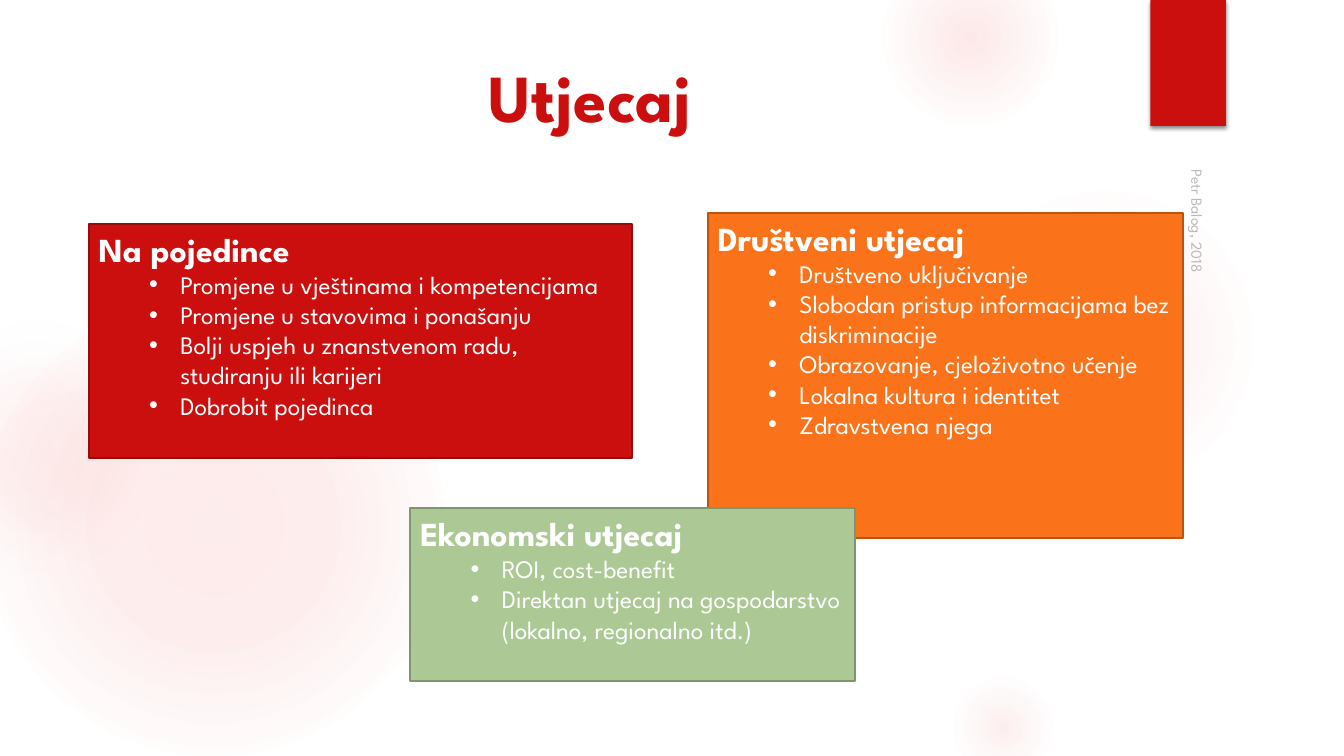
"""Build the slide on the impact on individuals, society and the economy."""
import dataclasses
import typing

import lxml.etree
import pptx
import pptx.dml.color
import pptx.enum.shapes
import pptx.enum.text
import pptx.oxml
import pptx.oxml.ns
import pptx.util

Inches = pptx.util.Inches
Pt = pptx.util.Pt
qn = pptx.oxml.ns.qn
Anchor = pptx.enum.text.MSO_ANCHOR
Align = pptx.enum.text.PP_ALIGN
Preset = pptx.enum.shapes.MSO_SHAPE
Box = tuple[float, float, float, float]


@dataclasses.dataclass(frozen=True)
class Theme:
    """Colours, font and type sizes of the slide."""
    font: str = "League Spartan"
    red: str = "CB0F0F"
    red_edge: str = "960B0B"
    orange: str = "FA731A"
    orange_edge: str = "B95513"
    green: str = "ACC995"
    green_edge: str = "7F956E"
    glow: str = "F35C5C"
    pale: str = "F3F3F3"
    white: str = "FFFFFF"
    grey: str = "8C8C8C"
    black: str = "000000"
    title_size: int = 48
    heading_size: int = 24
    item_size: int = 18
    credit_size: int = 11


THEME = Theme()


class Stop(typing.NamedTuple):
    """One gradient stop: position and opacity in percent, and colour."""
    position: int
    opacity: int
    colour: str = THEME.glow


class Glow(typing.NamedTuple):
    """A soft round glow in the background."""
    left: float
    top: float
    size: float
    stops: tuple[Stop, ...]


class Card(typing.NamedTuple):
    """One kind of impact with its examples."""
    box: Box
    fill: str
    edge: str
    heading: str
    items: tuple[str, ...]


GLOWS = (
    Glow(-0.17, 2.92, 4.58, (Stop(0, 11), Stop(36, 10), Stop(75, 0))),
    Glow(-0.92, 3.17, 2.58, (Stop(0, 8), Stop(36, 5), Stop(71, 0, THEME.pale))),
    Glow(9.41, 1.83, 3.08, (Stop(0, 7), Stop(36, 6), Stop(69, 0))),
    Glow(8.75, -0.5, 1.75, (Stop(0, 14), Stop(36, 7), Stop(73, 0))),
    Glow(9.41, 6.67, 1.08, (Stop(0, 10), Stop(31, 5), Stop(66, 0))),
)

CARDS = (
    Card((0.88, 2.22, 5.39, 2.32), THEME.red, THEME.red_edge, "Na pojedince", (
        "Promjene u vještinama i kompetencijama",
        "Promjene u stavovima i ponašanju",
        "Bolji uspjeh u znanstvenom radu, studiranju ili karijeri",
        "Dobrobit pojedinca")),
    Card((7.02, 2.11, 4.71, 3.23), THEME.orange, THEME.orange_edge, "Društveni utjecaj", (
        "Društveno uključivanje",
        "Slobodan pristup informacijama bez diskriminacije",
        "Obrazovanje, cjeloživotno učenje",
        "Lokalna kultura i identitet",
        "Zdravstvena njega")),
    Card((4.07, 5.04, 4.41, 1.72), THEME.green, THEME.green_edge, "Ekonomski utjecaj", (
        "ROI, cost-benefit",
        "Direktan utjecaj na gospodarstvo (lokalno, regionalno itd.)")),
)


def add_child(parent: typing.Any, tag: str, **attributes: typing.Any) -> typing.Any:
    """Append a drawing element with the given attributes."""
    values = {name: str(value) for name, value in attributes.items()}
    return lxml.etree.SubElement(parent, qn(f"a:{tag}"), values)


def add_colour(parent: typing.Any, colour: str, opacity: int) -> None:
    """Append a colour with its opacity in percent."""
    add_child(add_child(parent, "srgbClr", val=colour), "alpha", val=opacity * 1000)


def write(frame: typing.Any, text: str, *, size: int, colour: str = THEME.white,
          bold: bool = False, align: Align = Align.LEFT, bullet: bool = False,
          opacity: int = 100) -> None:
    """Write one paragraph, filling the first one while it is empty."""
    first = frame.paragraphs[0]
    paragraph = frame.add_paragraph() if first.runs else first
    paragraph.alignment = align
    if bullet:
        paragraph.level = 1
        properties = paragraph._p.get_or_add_pPr()
        properties.set("marL", str(Inches(0.81)))
        properties.set("indent", str(Inches(-0.31)))
        add_child(properties, "buFont", typeface="Arial")
        add_child(properties, "buChar", char="•")
    run = paragraph.add_run()
    run.text = text
    run.font.name = THEME.font
    run.font.size = Pt(size)
    run.font.bold = bold
    run.font.color.rgb = pptx.dml.color.RGBColor.from_string(colour)
    if opacity < 100:
        shade = run.font.fill._xPr.find(f"{qn('a:solidFill')}/{qn('a:srgbClr')}")
        add_child(shade, "alpha", val=opacity * 1000)


def set_frame(frame: typing.Any, anchor: Anchor = Anchor.TOP) -> None:
    """Make a text frame wrap at a fixed size."""
    frame.word_wrap = True
    frame.auto_size = pptx.enum.text.MSO_AUTO_SIZE.NONE
    frame.vertical_anchor = anchor


def add_block(slide: typing.Any, preset: Preset, box: Box, fill: str,
              edge: str | None = None) -> typing.Any:
    """Add a filled shape, outlined if an edge colour is given."""
    block = slide.shapes.add_shape(preset, *map(Inches, box))
    block.shadow.inherit = False
    block.fill.solid()
    block.fill.fore_color.rgb = pptx.dml.color.RGBColor.from_string(fill)
    if edge:
        block.line.color.rgb = pptx.dml.color.RGBColor.from_string(edge)
        block.line.width = Pt(1.5)
    else:
        block.line.fill.background()
    return block


def add_glow(slide: typing.Any, glow: Glow) -> None:
    """Add a circle that fades out from its centre."""
    circle = add_block(slide, Preset.OVAL, (glow.left, glow.top, glow.size, glow.size), THEME.glow)
    solid = circle.element.spPr.find(qn("a:solidFill"))
    gradient = pptx.oxml.parse_xml(
        f'<a:gradFill {pptx.oxml.ns.nsdecls("a")} rotWithShape="1"/>')
    stops = add_child(gradient, "gsLst")
    for stop in glow.stops:
        add_colour(add_child(stops, "gs", pos=stop.position * 1000), stop.colour, stop.opacity)
    centre = add_child(gradient, "path", path="circle")
    add_child(centre, "fillToRect", l=50000, t=50000, r=50000, b=50000)
    solid.getparent().replace(solid, gradient)


def add_ribbon(slide: typing.Any) -> None:
    """Add the red ribbon with its soft shadow at the top edge."""
    ribbon = add_block(slide, Preset.RECTANGLE, (11.41, 0, 0.75, 1.25), THEME.red)
    effects = ribbon.element.spPr.find(qn("a:effectLst"))
    shadow = add_child(effects, "outerShdw", blurRad=Pt(3), dist=Pt(2),
                       dir=90 * 60000, rotWithShape=0)
    add_colour(shadow, THEME.black, 45)


def add_title(slide: typing.Any) -> None:
    """Place the title in front of the background."""
    title = slide.shapes.title
    title.left, title.top, title.width, title.height = map(Inches, (0.71, 0.5, 10.29, 1.53))
    set_frame(title.text_frame)
    write(title.text_frame, "Utjecaj", size=THEME.title_size, colour=THEME.red,
          bold=True, align=Align.CENTER)
    slide.shapes[-1].element.addnext(title.element)


def add_card(slide: typing.Any, card: Card) -> None:
    """Add a coloured card with a heading and bulleted examples."""
    frame = add_block(slide, Preset.RECTANGLE, card.box, card.fill, card.edge).text_frame
    set_frame(frame)
    write(frame, card.heading, size=THEME.heading_size, bold=True)
    for item in card.items:
        write(frame, item, size=THEME.item_size, bullet=True)


def add_credit(slide: typing.Any) -> None:
    """Add the author and year, turned along the right edge."""
    credit = slide.shapes.add_textbox(*map(Inches, (9.79, 3.53, 4.22, 0.33)))
    credit.rotation = 90
    set_frame(credit.text_frame, Anchor.BOTTOM)
    write(credit.text_frame, "Petr Balog, 2018", size=THEME.credit_size,
          colour=THEME.grey, opacity=60)


def main() -> None:
    """Build and save the presentation."""
    presentation = pptx.Presentation()
    presentation.slide_width, presentation.slide_height = Inches(13.33), Inches(7.5)
    slide = presentation.slides.add_slide(presentation.slide_layouts.get_by_name("Title Only"))
    for glow in GLOWS:
        add_glow(slide, glow)
    add_ribbon(slide)
    add_title(slide)
    for card in CARDS:
        add_card(slide, card)
    add_credit(slide)
    presentation.save("out.pptx")


if __name__ == "__main__":
    main()
